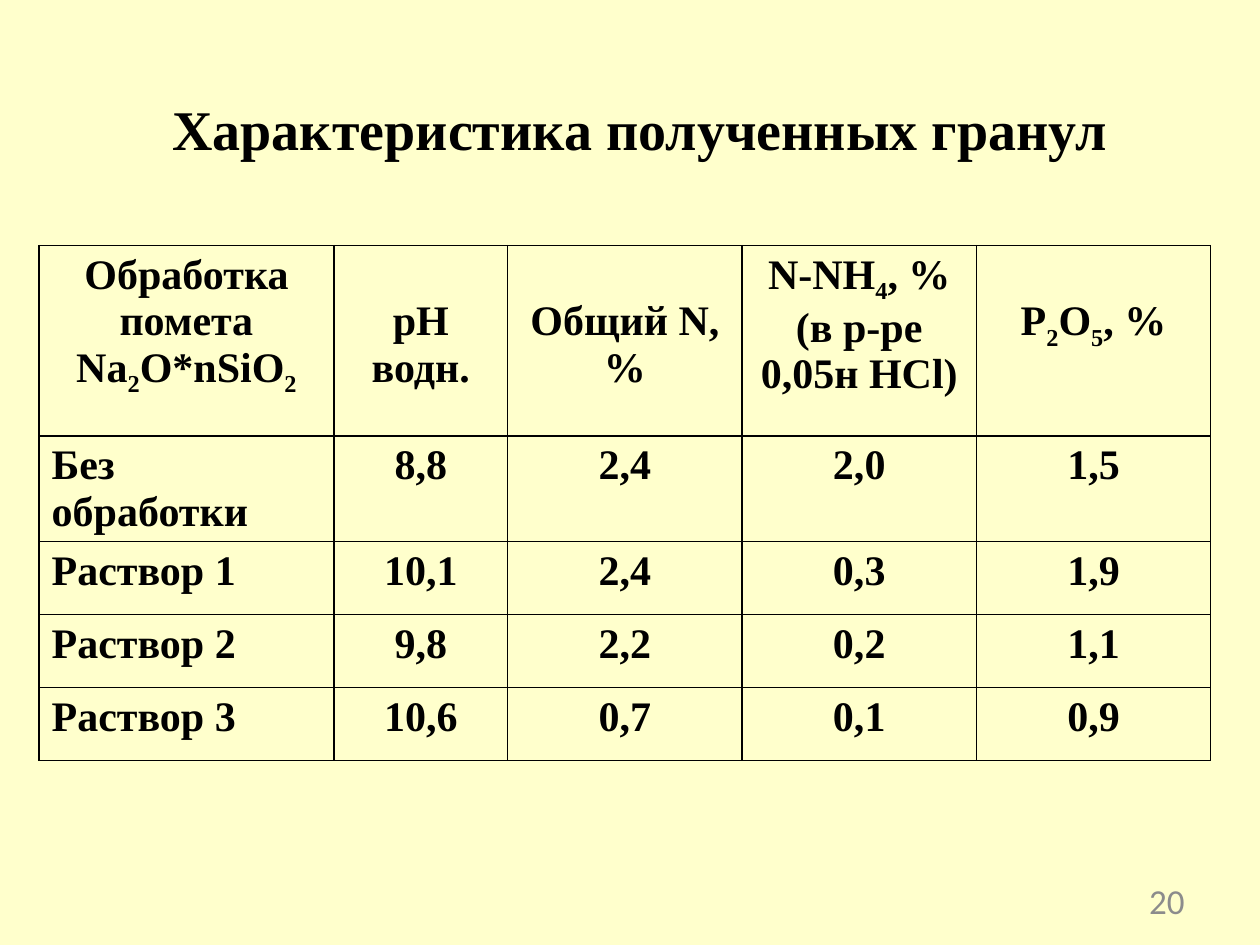
from lxml.etree import SubElement
from pptx import Presentation
from pptx.dml.color import RGBColor
from pptx.enum.text import MSO_ANCHOR as Anchor, PP_ALIGN as Align
from pptx.oxml.ns import qn
from pptx.util import Inches, Pt


def style(font, name, size, color, bold=False):
    font.name = name
    font.size = Pt(size)
    font.bold = bold
    font.color.rgb = RGBColor.from_string(color)


def add_border(cell):
    properties = cell._tc.get_or_add_tcPr()
    for side in ("lnL", "lnR", "lnT", "lnB"):
        line = SubElement(properties, qn(f"a:{side}"), w=str(Pt(1)))
        fill = SubElement(line, qn("a:solidFill"))
        SubElement(fill, qn("a:srgbClr"), val="000000")


deck = Presentation()
deck.slide_width, deck.slide_height = Inches(10), Inches(7.5)
page = deck.slides.add_slide(deck.slide_layouts[5])
page.background.fill.solid()
page.background.fill.fore_color.rgb = RGBColor.from_string("FFFFCC")

title = page.shapes.title
title.left, title.top = Inches(0.55), Inches(0.55)
title.width, title.height = Inches(9.06), Inches(0.94)
title.text_frame.text = "Характеристика полученных гранул"
title.text_frame.vertical_anchor = Anchor.MIDDLE
para = title.text_frame.paragraphs[0]
para.alignment = Align.CENTER
style(para.font, "Times New Roman", 32, "000000", True)

# "_" marks the next character as a subscript
rows = [
    ["Обработка помета Na_2O*nSiO_2", "рН водн.", "Общий N, %",
     "N-NH_4, %\n(в р-ре 0,05н HCl)", "P_2O_5, %"],
    ["Без обработки", "8,8", "2,4", "2,0", "1,5"],
    ["Раствор 1", "10,1", "2,4", "0,3", "1,9"],
    ["Раствор 2", "9,8", "2,2", "0,2", "1,1"],
    ["Раствор 3", "10,6", "0,7", "0,1", "0,9"],
]
widths = [2.34, 1.38, 1.86, 1.86, 1.86]
heights = [1.51, 0.76, 0.58, 0.58, 0.58]
lowered_headers = (1, 2, 4)

table = page.shapes.add_table(len(rows), len(widths), Inches(0.31), Inches(1.95),
                              Inches(sum(widths)), Inches(sum(heights))).table
for column, width in zip(table.columns, widths):
    column.width = Inches(width)
for row, height in zip(table.rows, heights):
    row.height = Inches(height)

for r, texts in enumerate(rows):
    for c, text in enumerate(texts):
        cell = table.cell(r, c)
        add_border(cell)
        cell.fill.background()
        if r == 0 and c in lowered_headers:
            cell.margin_top = Inches(0.42)
        cell.text_frame.text = text.replace("_", "")
        for para, line in zip(cell.text_frame.paragraphs, text.split("\n")):
            para.clear()
            para.alignment = Align.LEFT if r and c == 0 else Align.CENTER
            style(para.font, "Times New Roman", 24, "000000", True)
            first, *others = line.split("_")
            para.add_run().text = first
            for part in others:
                span = para.add_run()
                span.text = part[0]
                span.font._element.set("baseline", "-25000")
                if part[1:]:
                    para.add_run().text = part[1:]

box = page.shapes.add_textbox(Inches(7.17), Inches(6.95), Inches(2.33), Inches(0.4))
box.text_frame.word_wrap = True
box.text_frame.vertical_anchor = Anchor.MIDDLE
box.text_frame.text = "20"
para = box.text_frame.paragraphs[0]
para.alignment = Align.RIGHT
style(para.font, "Calibri", 20, "8C8C8C")

deck.save("out.pptx")
